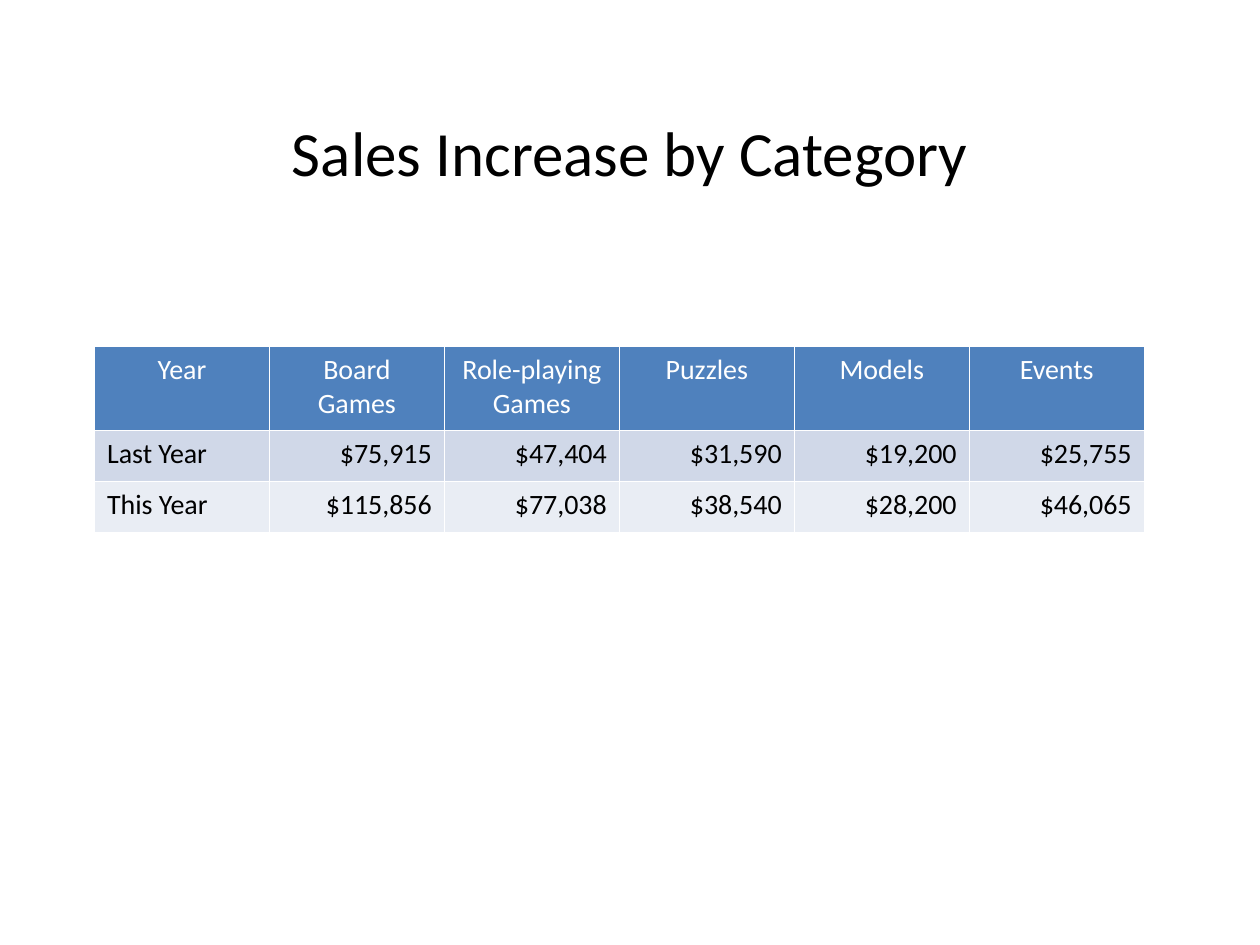
from lxml import etree
from pptx import Presentation
from pptx.dml.color import RGBColor
from pptx.enum.text import MSO_ANCHOR, PP_ALIGN
from pptx.oxml.ns import qn
from pptx.util import Pt

LEFT, CENTER, RIGHT = PP_ALIGN.LEFT, PP_ALIGN.CENTER, PP_ALIGN.RIGHT
BOTTOM = MSO_ANCHOR.BOTTOM
BLANK = 6
FONT = "Calibri"
COLORS = {
    "text": "000000",
    "white": "FFFFFF",
    "header": "4F81BD",
    "band_dark": "D0D8E8",
    "band_light": "E9EDF4",
}
SALES = [
    ["Year", "Board\nGames", "Role-playing Games", "Puzzles", "Models", "Events"],
    ["Last Year", "$75,915", "$47,404", "$31,590", "$19,200", "$25,755"],
    ["This Year", "$115,856", "$77,038", "$38,540", "$28,200", "$46,065"],
]
ROW_FILLS = ["header", "band_dark", "band_light"]
ROW_HEIGHTS = [48, 29.2, 29.2]


class Deck:
    def __init__(self, width, height):
        self.prs = Presentation()
        self.prs.slide_width, self.prs.slide_height = Pt(width), Pt(height)
        self.s = self.prs.slides.add_slide(self.prs.slide_layouts[BLANK])

    def add_text(self, tf, text, size, color, align):
        for i, line in enumerate(text.split("\n")):
            p = tf.add_paragraph() if i else tf.paragraphs[0]
            p.alignment = align
            r = p.add_run()
            r.text = line
            r.font.name = FONT
            r.font.size = Pt(size)
            r.font.bold = False
            r.font.color.rgb = RGBColor.from_string(COLORS[color])

    def title(self, text, x, y, w, h):
        sp = self.s.shapes.add_textbox(Pt(x), Pt(y), Pt(w), Pt(h))
        tf = sp.text_frame
        tf.word_wrap = True
        tf.vertical_anchor = BOTTOM
        self.add_text(tf, text, 36, "text", CENTER)

    def borders(self, cell, color, width):
        pr = cell._tc.get_or_add_tcPr()
        for i, side in enumerate(("a:lnL", "a:lnR", "a:lnT", "a:lnB")):
            ln = etree.Element(qn(side), w=str(Pt(width)))
            fill = etree.SubElement(ln, qn("a:solidFill"))
            etree.SubElement(fill, qn("a:srgbClr"), val=COLORS[color])
            pr.insert(i, ln)

    def table(self, rows, fills, heights, x, y, w):
        cols = len(rows[0])
        table = self.s.shapes.add_table(
            len(rows), cols, Pt(x), Pt(y), Pt(w), Pt(sum(heights))
        ).table
        for col in table.columns:
            col.width = Pt(w / cols)
        for i, (values, fill, height) in enumerate(zip(rows, fills, heights)):
            table.rows[i].height = Pt(height)
            for j, value in enumerate(values):
                cell = table.cell(i, j)
                cell.fill.solid()
                cell.fill.fore_color.rgb = RGBColor.from_string(COLORS[fill])
                self.borders(cell, "white", 1)
                align = CENTER if i == 0 else RIGHT if j else LEFT
                color = "text" if i else "white"
                self.add_text(cell.text_frame, value, 16, color, align)


def main():
    deck = Deck(720, 540)
    deck.title("Sales Increase by Category", 36, 21.6, 648, 90)
    deck.table(SALES, ROW_FILLS, ROW_HEIGHTS, 54, 198, 600)
    deck.prs.save("out.pptx")


if __name__ == "__main__":
    main()
